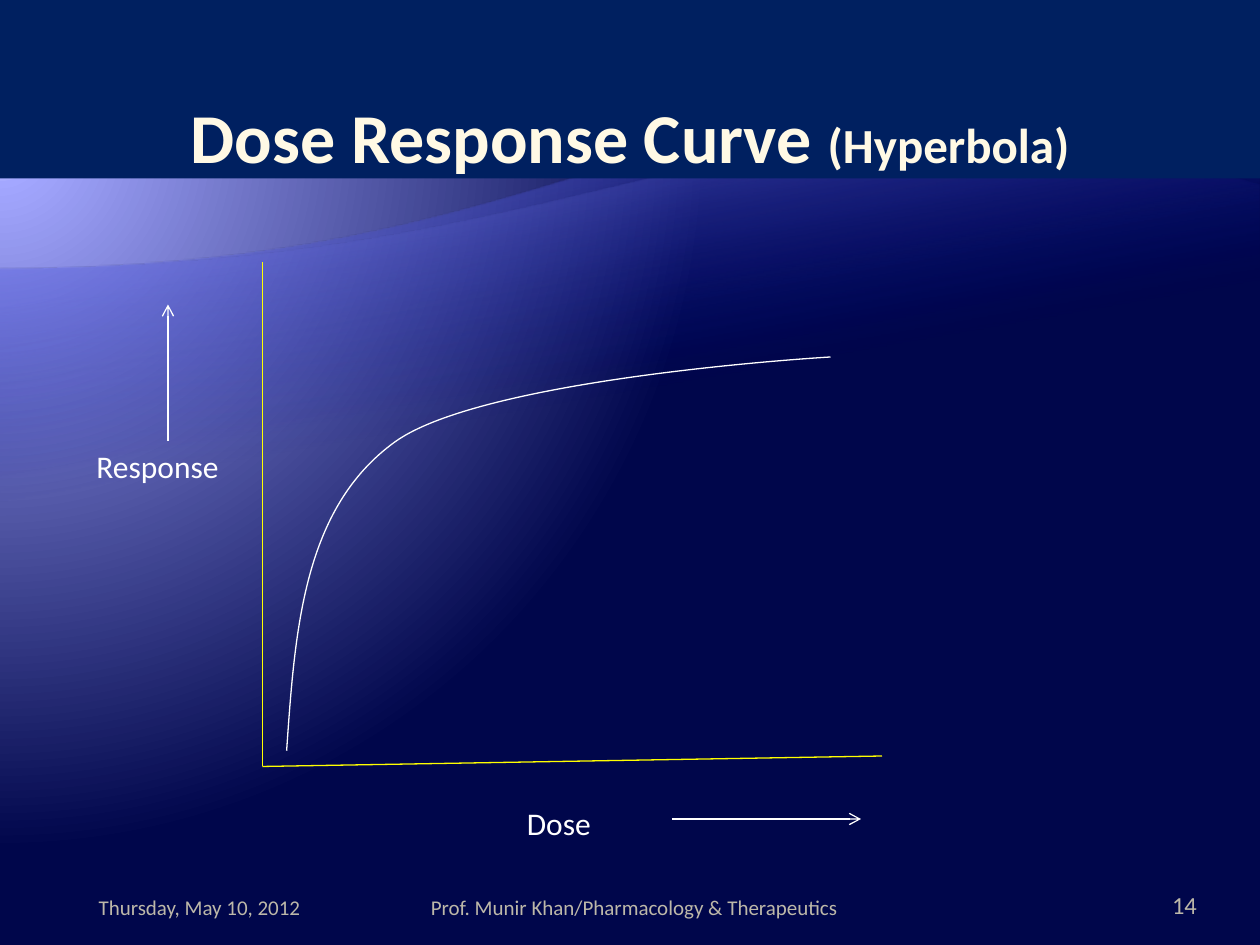
from lxml.etree import SubElement
from pptx import Presentation
from pptx.dml.color import RGBColor
from pptx.enum.shapes import MSO_CONNECTOR as Connector
from pptx.enum.text import MSO_ANCHOR as Anchor, MSO_AUTO_SIZE as AutoSize, PP_ALIGN as Align
from pptx.oxml.ns import qn
from pptx.util import Inches, Pt

PX = Inches(1) // 120  # 120 px to the inch
WIDTH, HEIGHT = 1200, 900
FONT = "Calibri"
COLORS = {
    "glow": "A8ACFF", "pale": "A3A7FF", "night": "00064B",
    "wave": "000D9E", "crest": "797FFF", "banner": "002060",
    "title": "FFF9E5", "footer": "BDB8A9", "axis": "FFFF00", "white": "FFFFFF",
}


def color(name):
    return RGBColor.from_string(COLORS[name])


class SlideBuilder:
    def __init__(self, prs):
        self.slide = prs.slides.add_slide(prs.slide_layouts[5])
        self.shapes = self.slide.shapes

    def gradient(self, fill, owner, stops):
        """Fill with (position, colour, opacity) stops; return the gradFill."""
        fill.gradient()
        grad = next(owner.iter(qn("a:gradFill")))
        for child in list(grad):
            grad.remove(child)
        grad.set("rotWithShape", "1")
        stop_list = SubElement(grad, qn("a:gsLst"))
        for position, name, opacity in stops:
            stop = SubElement(stop_list, qn("a:gs"), pos=str(position * 1000))
            rgb = SubElement(stop, qn("a:srgbClr"), val=COLORS[name])
            if opacity < 100:
                SubElement(rgb, qn("a:alpha"), val=str(opacity * 1000))
        return grad

    def background(self, stops, focus):
        grad = self.gradient(self.slide.background.fill, self.slide._element, stops)
        circle = SubElement(grad, qn("a:path"), {"path": "circle"})
        SubElement(circle, qn("a:fillToRect"),
                   {side: str(value * 1000) for side, value in zip("ltrb", focus)})

    def outline(self, start, segments, close=False):
        """Segments hold one point for a line, three for a cubic curve."""
        ends = [segment[-1] for segment in segments]
        builder = self.shapes.build_freeform(*start, scale=PX)
        builder.add_line_segments(ends, close=close)
        shape = builder.convert_to_shape()
        shape.shadow.inherit = False
        left, top = (min(values) for values in zip(start, *ends))
        line_steps = list(shape._element.iter(qn("a:lnTo")))
        for step, segment in zip(line_steps, segments):
            if len(segment) == 3:
                step.tag = qn("a:cubicBezTo")
                step.remove(step[0])
                for x, y in segment:
                    SubElement(step, qn("a:pt"), x=str(x - left), y=str(y - top))
        return shape

    def wave(self, top, bottom, crest, stops):
        """Draw the wave upside down, then turn it by half a circle."""
        def turned(x, y):
            return WIDTH - x, top + bottom - y

        segments = [[turned(0, bottom)], [turned(0, 256)],
                    [turned(*point) for point in (*crest, (WIDTH, top))]]
        shape = self.outline(turned(WIDTH, bottom), segments, close=True)
        shape.rotation = 180
        shape.line.fill.background()
        grad = self.gradient(shape.fill, shape._element.spPr, stops)
        SubElement(grad, qn("a:lin"), ang=str(80 * 60000), scaled="0")

    def curve(self, start, *segments):
        shape = self.outline(start, segments)
        shape.fill.background()
        shape.line.color.rgb = color("white")
        shape.line.width = Pt(0.75)

    def line(self, start, end, name, arrow=False):
        line = self.shapes.add_connector(
            Connector.STRAIGHT, *(value * PX for value in (*start, *end)))
        line.line.color.rgb = color(name)
        line.line.width = Pt(0.75)
        if arrow:
            SubElement(line.line._get_or_add_ln(), qn("a:tailEnd"), type="arrow")
        SubElement(line._element.spPr, qn("a:effectLst"))

    def style(self, run, size, name, bold=False):
        run.font.name = FONT
        run.font.size = Pt(size)
        run.font.bold = bold
        run.font.color.rgb = color(name)

    def title(self, box, parts):
        title = self.shapes.title
        self.shapes._spTree.append(title._element)  # in front of the waves
        title.left, title.top, title.width, title.height = (v * PX for v in box)
        title.fill.solid()
        title.fill.fore_color.rgb = color("banner")
        frame = title.text_frame
        frame.vertical_anchor = Anchor.BOTTOM
        frame.margin_left = frame.margin_right = 0
        frame.margin_top = frame.margin_bottom = PX
        paragraph = frame.paragraphs[0]
        paragraph.alignment = Align.CENTER
        for text, size in parts:
            run = paragraph.add_run()
            run.text = text
            self.style(run, size, "title", bold=True)

    def text(self, box, text, size=18, name="white", align=Align.LEFT,
             anchor=Anchor.TOP, insets=(12, 12)):
        frame = self.shapes.add_textbox(*(v * PX for v in box)).text_frame
        frame.word_wrap = True
        frame.auto_size = AutoSize.NONE
        frame.vertical_anchor = anchor
        frame.margin_left, frame.margin_right = (v * PX for v in insets)
        frame.text = text
        frame.paragraphs[0].alignment = align
        self.style(frame.paragraphs[0].runs[0], size, name)


def main():
    prs = Presentation()
    prs.slide_width, prs.slide_height = WIDTH * PX, HEIGHT * PX
    page = SlideBuilder(prs)

    # Backdrop with two translucent waves
    page.background([(5, "glow", 100), (5, "pale", 100), (90, "night", 100)],
                    focus=(20, 30, 135, 100))
    page.wave(150, 880, [(600, 256), (641, 6)],
              [(65, "wave", 0), (100, "crest", 55)])
    page.wave(176, 764, [(600, 256), (718, 37)],
              [(65, "wave", 0), (100, "pale", 30)])

    # Title banner
    page.title((0, 0, WIDTH, 170), [("Dose Response Curve ", 40), ("(Hyperbola)", 28)])

    # Footer
    for left, width, text, size, align, insets in (
        (60, 260, "Thursday, May 10, 2012", 12, Align.CENTER, (12, 12)),
        (320, 580, "Prof. Munir Khan/Pharmacology & Therapeutics", 12, Align.CENTER, (0, 12)),
        (1070, 70, "14", 14, Align.RIGHT, (12, 0)),
    ):
        page.text((left, 834, width, 48), text, size, "footer", align,
                  Anchor.BOTTOM, insets)

    # Axes and dose-response curve
    origin = (250, 730)
    page.line((250, 250), origin, "axis")
    page.line(origin, (840, 720), "axis")
    page.curve((273, 715),
               ((281, 599), (289, 484), (376, 421)),
               ((462, 359), (791, 340), (791, 340)))

    # Axis labels with arrows
    page.text((490, 760, 110, 48), "Dose")
    page.text((80, 420, 160, 48), "Response")
    page.line((640, 780), (820, 780), "white", arrow=True)
    page.line((160, 420), (160, 290), "white", arrow=True)

    prs.save("out.pptx")


if __name__ == "__main__":
    main()
